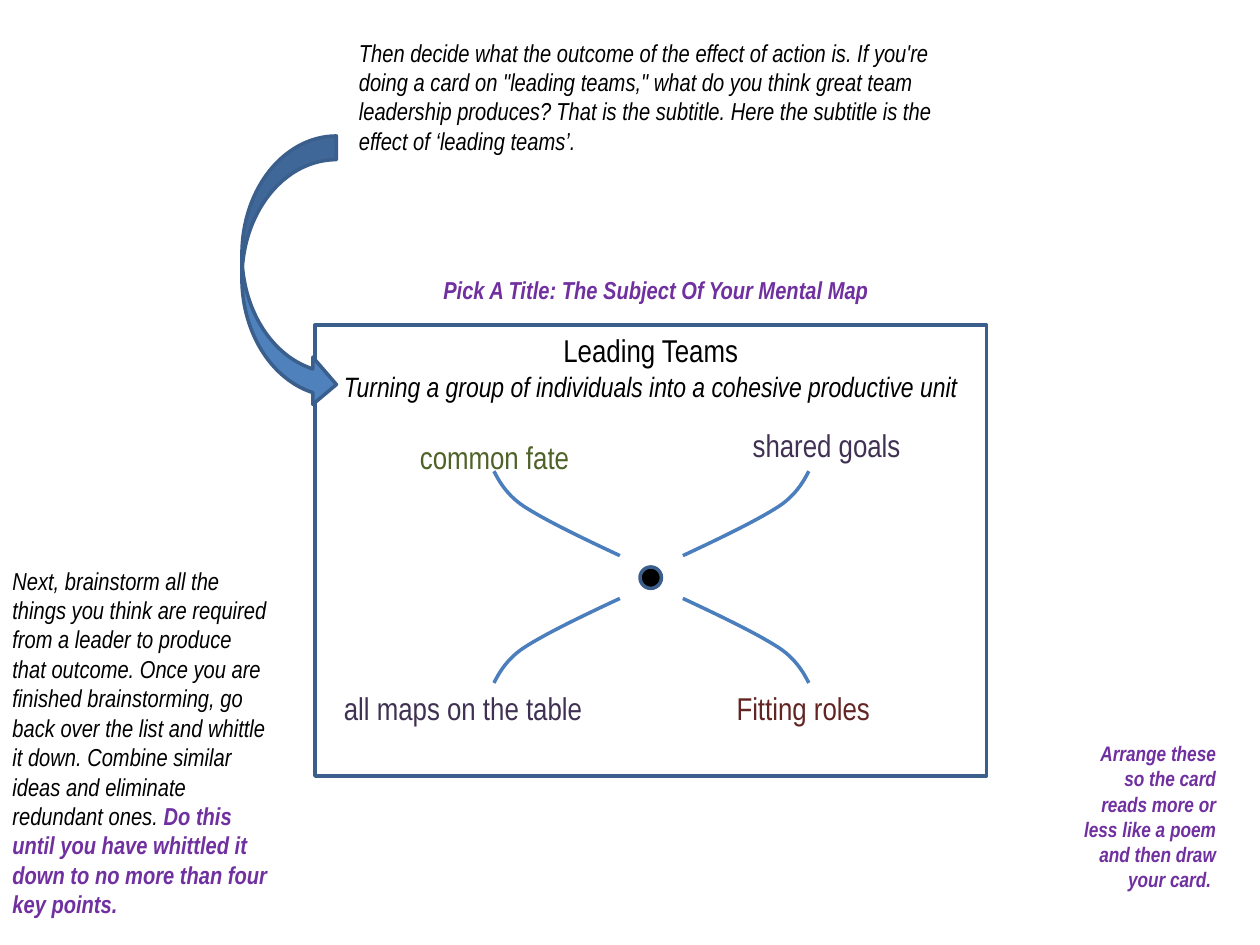
from dataclasses import dataclass

from lxml import etree
from pptx import Presentation
from pptx.dml.color import RGBColor
from pptx.enum.shapes import MSO_SHAPE
from pptx.enum.text import MSO_ANCHOR, MSO_AUTO_SIZE, PP_ALIGN
from pptx.oxml.ns import qn
from pptx.util import Inches, Pt

RECT, OVAL, ARROW = MSO_SHAPE.RECTANGLE, MSO_SHAPE.OVAL, MSO_SHAPE.CURVED_RIGHT_ARROW
LEFT, CENTER, RIGHT = PP_ALIGN.LEFT, PP_ALIGN.CENTER, PP_ALIGN.RIGHT
TOP, GROW = MSO_ANCHOR.TOP, MSO_AUTO_SIZE.SHAPE_TO_FIT_TEXT

BLACK = RGBColor(0x00, 0x00, 0x00)
WHITE = RGBColor(0xFF, 0xFF, 0xFF)
BLUE = RGBColor(0x4F, 0x81, 0xBD)
EDGE = RGBColor(0x3A, 0x5F, 0x8C)
BRANCH = RGBColor(0x4B, 0x7E, 0xBC)
VIOLET = RGBColor(0x70, 0x30, 0xA0)
PLUM = RGBColor(0x40, 0x31, 0x52)
MAROON = RGBColor(0x63, 0x25, 0x23)
GREEN = RGBColor(0x4F, 0x62, 0x28)

FONT = "Arial Narrow"
HUB = (5.17, 4.58)
# Offsets from the hub: a start, then two Bezier segments of three points
CURVE = [(0.25, 0.17), (0.55, 0.31), (0.84, 0.45), (1.01, 0.56),
         (1.18, 0.67), (1.24, 0.83), (1.25, 0.84)]


@dataclass
class Run:
    text: str
    size: int
    color: RGBColor = BLACK
    bold: bool = False
    italic: bool = False


@dataclass
class Note:
    box: tuple[float, float, float, float]
    runs: list[Run]
    align: PP_ALIGN = LEFT
    wrap: bool = True


@dataclass
class Solid:
    kind: MSO_SHAPE
    box: tuple[float, float, float, float]
    fill: RGBColor


SOLIDS = [
    Solid(RECT, (2.5, 2.58, 5.33, 3.58), WHITE),
    Solid(OVAL, (5.08, 4.5, 0.17, 0.17), BLACK),
]
HOOK = Solid(ARROW, (1.92, 1.08, 0.75, 2.16), BLUE)

HEADS = [
    Run("Leading Teams", 18),
    Run("Turning a group of individuals into a cohesive productive unit", 16, italic=True),
]

NOTES = [
    # Key points
    Note((5.82, 3.33, 1.48, 0.4), [Run("shared goals", 18, PLUM)], CENTER, False),
    Note((5.67, 5.42, 1.41, 0.4), [Run("Fitting roles", 18, MAROON)], CENTER, False),
    Note((2.5, 5.42, 2.35, 0.4), [Run("all maps on the table", 18, PLUM)], CENTER, False),
    Note((3.14, 3.43, 1.57, 0.4), [Run("common fate", 18, GREEN)], CENTER, False),
    # Instructions
    Note((3.42, 2.13, 3.61, 0.34),
         [Run("Pick A Title: The Subject Of Your Mental Map", 14, VIOLET, True, True)],
         wrap=False),
    Note((2.75, 0.25, 5, 1.04),
         [Run("Then decide what the outcome of the effect of action is. If you're doing "
              "a card on \"leading teams,\" what do you think great team leadership "
              "produces? That is the subtitle. Here the subtitle is the effect of "
              "‘leading teams’.", 14, italic=True)]),
    Note((0, 4.44, 2.25, 2.93),
         [Run("Next, brainstorm all the things you think are required from a leader to "
              "produce that outcome. Once you are finished brainstorming, go back over "
              "the list and whittle it down. Combine similar ideas and eliminate "
              "redundant ones. ", 14, italic=True),
          Run("Do this until you have whittled it down to no more than four key points.",
              14, VIOLET, True, True)]),
    Note((8.5, 5.83, 1.25, 1.31),
         [Run("Arrange these so the card reads more or less like a poem and then draw "
              "your card. ", 12, VIOLET, True, True)], RIGHT),
]


def add_run(para, run: Run) -> None:
    part = para.add_run()
    part.text = run.text
    form = {"name": FONT, "size": Pt(run.size), "bold": run.bold, "italic": run.italic}
    for key, value in form.items():
        setattr(part.font, key, value)
    part.font.color.rgb = run.color


def add_solid(slide, item: Solid):
    shape = slide.shapes.add_shape(item.kind, *map(Inches, item.box))
    shape.shadow.inherit = False
    shape.fill.solid()
    shape.fill.fore_color.rgb = item.fill
    shape.line.color.rgb = EDGE
    shape.line.width = Pt(2)
    return shape


def add_note(slide, note: Note) -> None:
    frame = slide.shapes.add_textbox(*map(Inches, note.box)).text_frame
    for key, value in {"word_wrap": note.wrap, "auto_size": GROW}.items():
        setattr(frame, key, value)
    para = frame.paragraphs[0]
    para.alignment = note.align
    for run in note.runs:
        add_run(para, run)


def add_branch(slide, across: int, down: int) -> None:
    """Draw one curved branch; the signs choose its quarter around the hub."""
    points = [(Inches(HUB[0] + across * x), Inches(HUB[1] + down * y)) for x, y in CURVE]
    pen = slide.shapes.build_freeform(*points[0])
    pen.add_line_segments(points[1:], close=False)
    shape = pen.convert_to_shape()
    shape.shadow.inherit = False
    shape.fill.background()
    shape.line.color.rgb = BRANCH
    shape.line.width = Pt(2)

    # Turn each three line steps into one Bezier segment
    track = next(shape.element.iter(qn("a:path")))
    steps = track.findall(qn("a:lnTo"))
    for first in range(0, len(steps), 3):
        bend = etree.SubElement(track, qn("a:cubicBezTo"))
        for step in steps[first:first + 3]:
            bend.append(step[0])
            track.remove(step)


def main() -> None:
    deck = Presentation()
    deck.slide_width, deck.slide_height = Inches(10), Inches(7.5)
    slide = deck.slides.add_slide(deck.slide_layouts[6])

    # Card with its title and subtitle, and the hub
    card, _ = [add_solid(slide, item) for item in SOLIDS]
    frame = card.text_frame
    frame.vertical_anchor = TOP
    for i, head in enumerate(HEADS):
        para = frame.add_paragraph() if i else frame.paragraphs[0]
        para.alignment = CENTER
        add_run(para, head)

    # Branches
    for down in (1, -1):
        for across in (1, -1):
            add_branch(slide, across, down)

    # Texts, then the arrow on top
    for note in NOTES:
        add_note(slide, note)
    add_solid(slide, HOOK)

    deck.save("out.pptx")


if __name__ == "__main__":
    main()
